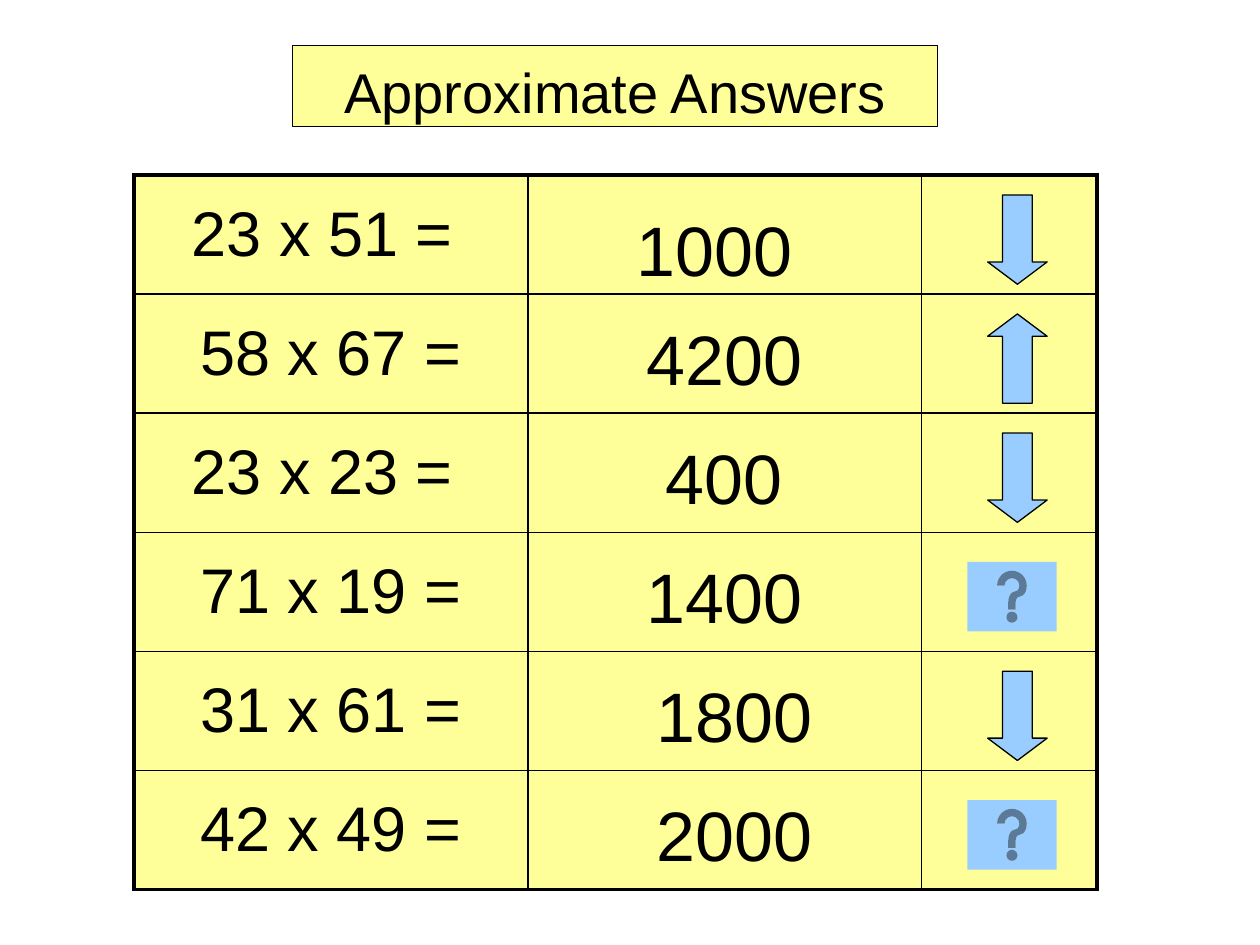
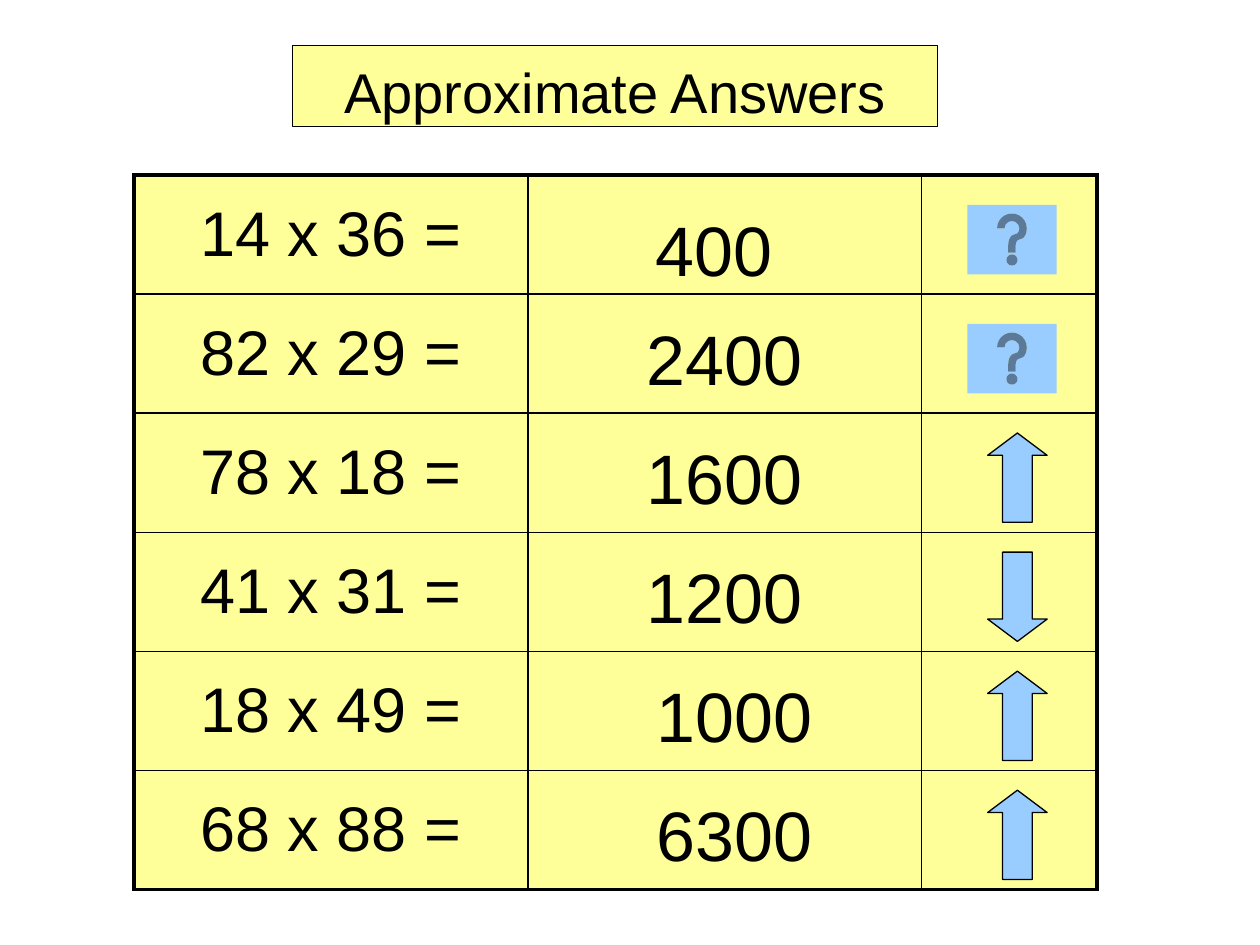
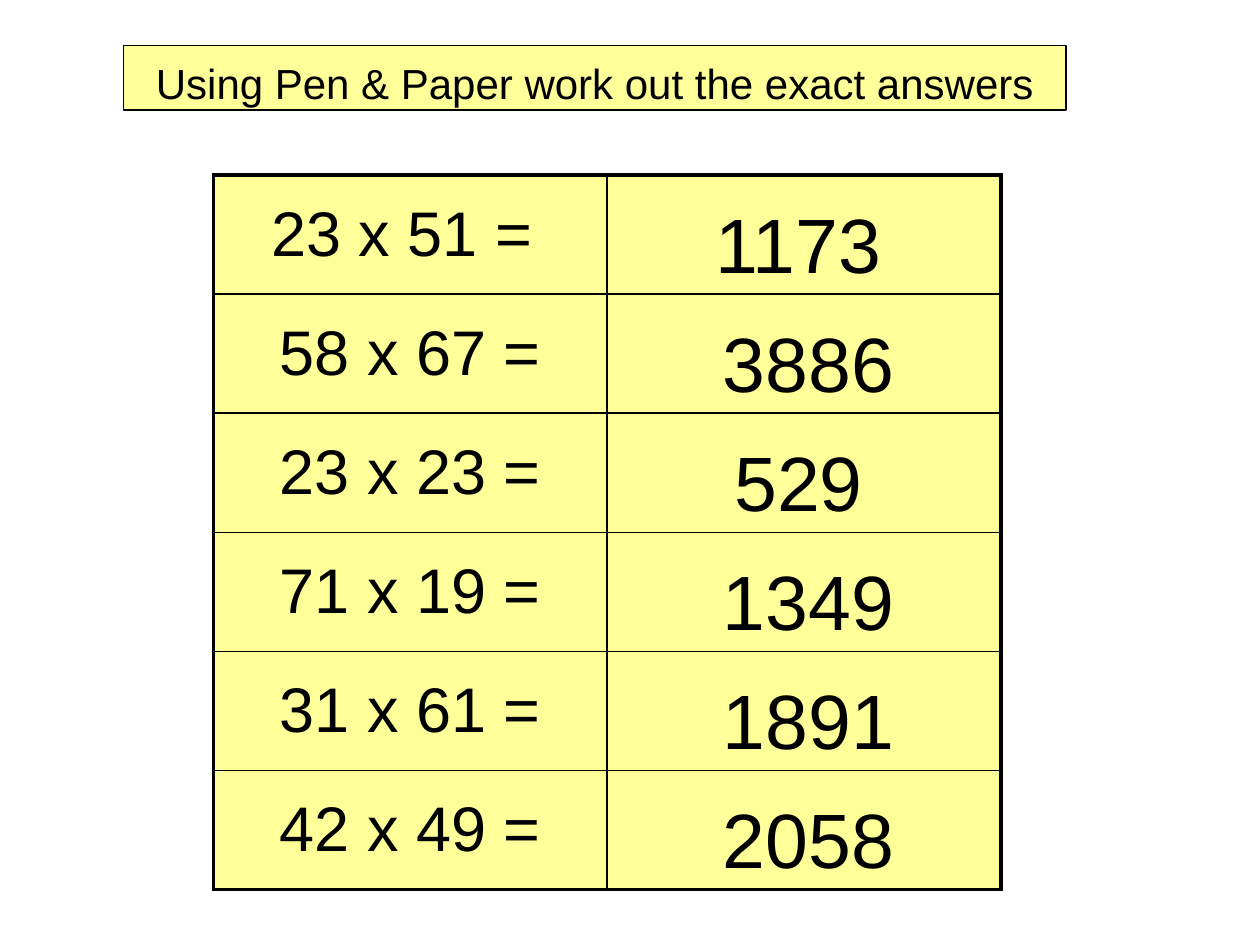
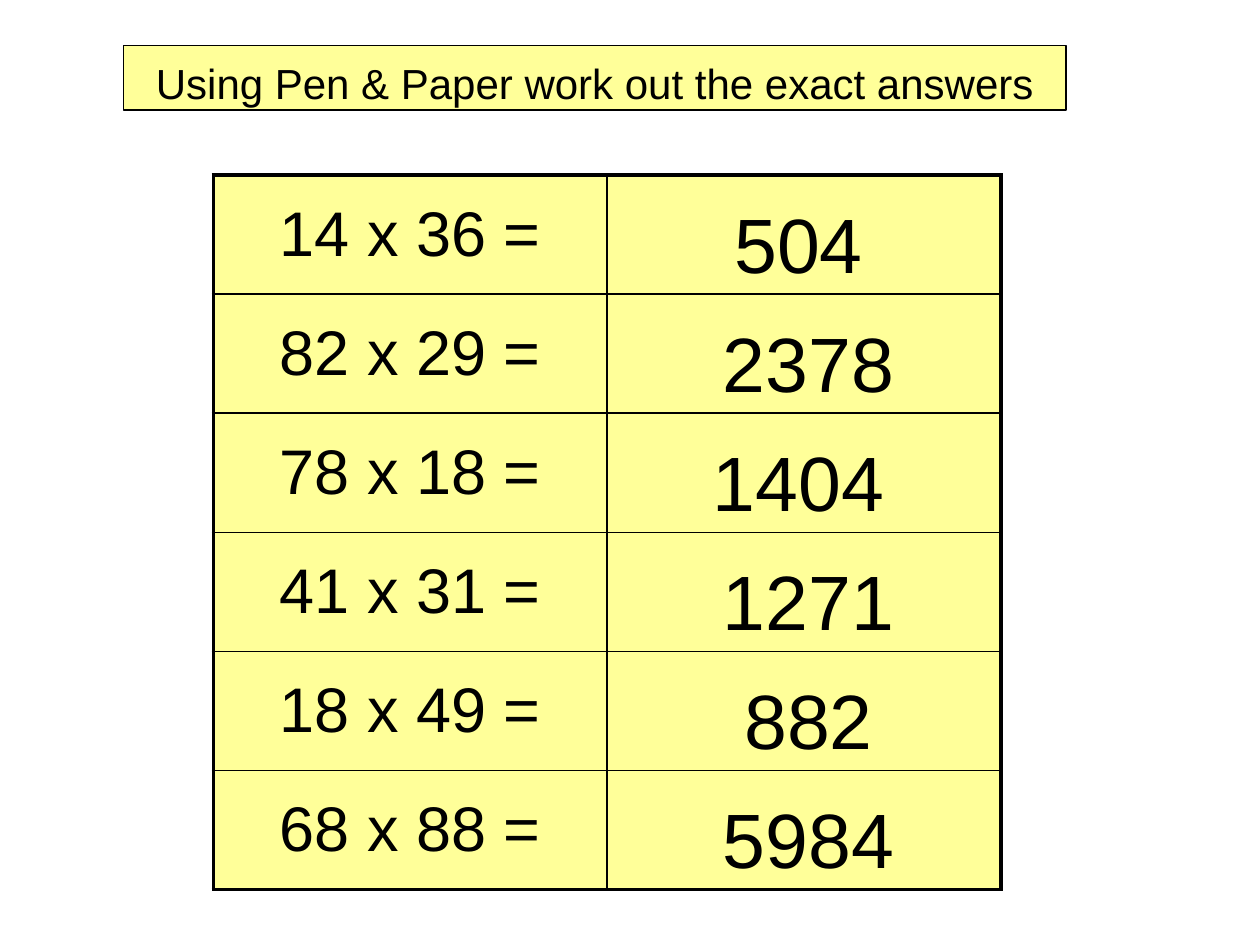
from typing import NamedTuple

from lxml.etree import SubElement
from pptx import Presentation
from pptx.dml.color import RGBColor as Rgb
from pptx.enum.shapes import MSO_SHAPE as Kind
from pptx.enum.text import MSO_ANCHOR as Anchor, MSO_AUTO_SIZE as Fit, PP_ALIGN as Align
from pptx.oxml.ns import qn
from pptx.shapes.base import BaseShape
from pptx.slide import Slide
from pptx.text.text import TextFrame
from pptx.util import Inches, Length, Mm, Pt

COLOR = {"ink": "000000", "pale": "FFFF99", "mark": "99CCFF"}
FONT = "Arial"

# Grid: one unit is 2 mm; the tables share rows and columns
ROW, COL, MARK_COL = 12, 39.7, 17.65
TABLE_TOP, TITLE_TOP = 17.65, 4.6
THIN, THICK = 1, 2.25


class Title(NamedTuple):
    words: list[tuple[str, int]]  # text and size
    left: float
    width: float
    height: float


class Style(NamedTuple):
    title: Title
    left: float
    cols: list[float]
    size: int
    width: float
    height: float
    shifts: list[int]  # sideways step of each answer
    drops: list[int]   # downward step of each answer


class Sum(NamedTuple):
    text: str
    answer: str
    mark: str = ""


ROUGH = Style(Title([("Approximate", 32), (" ", 24), ("Answers", 32)], 29.5, 65, 8.15),
              13.5, [COL, COL, MARK_COL], 40, 29, 9.75,
              [0, 1, 1, 1, 2, 2], [2, 1, 1, 1, 1, 1])
EXACT = Style(Title([("Using Pen & Paper work out the exact answers", 24)], 12.45, 95, 6.5),
              21.5, [COL, COL], 44, 30, 10.55,
              [0, 1, 0, 1, 1, 1], [1] * 6)

PAGES = [
    (ROUGH, [Sum("23 x 51 = ", "1000", "down"), Sum("58 x 67 =", "4200", "up"),
             Sum("23 x 23 = ", "400", "down"), Sum("71 x 19 =", "1400", "help"),
             Sum("31 x 61 =", "1800", "down"), Sum("42 x 49 =", "2000", "help")]),
    (ROUGH, [Sum("14 x 36 =", "400", "help"), Sum("82 x 29 =", "2400", "help"),
             Sum("78 x 18 =", "1600", "up"), Sum("41 x 31 =", "1200", "down"),
             Sum("18 x 49 =", "1000", "up"), Sum("68 x 88 =", "6300", "up")]),
    (EXACT, [Sum("23 x 51 = ", "1173"), Sum("58 x 67 =", "3886"),
             Sum("23 x 23 =", "529"), Sum("71 x 19 =", "1349"),
             Sum("31 x 61 =", "1891"), Sum("42 x 49 =", "2058")]),
    (EXACT, [Sum("14 x 36 =", "504"), Sum("82 x 29 =", "2378"),
             Sum("78 x 18 =", "1404"), Sum("41 x 31 =", "1271"),
             Sum("18 x 49 =", "882"), Sum("68 x 88 =", "5984")]),
]


def grid(*units: float) -> list[Length]:
    return [Mm(2 * unit) for unit in units]


def tint(name: str) -> Rgb:
    return Rgb.from_string(COLOR[name])


def write(frame: TextFrame, words: list[tuple[str, int]]) -> None:
    para = frame.paragraphs[0]
    para.alignment = Align.CENTER
    for text, size in words:
        run = para.add_run()
        run.text = text
        run.font.name, run.font.size = FONT, Pt(size)
        run.font.color.rgb = tint("ink")


def fit(frame: TextFrame) -> None:
    frame.word_wrap = True
    frame.auto_size = Fit.SHAPE_TO_FIT_TEXT
    frame.vertical_anchor = Anchor.TOP
    frame.margin_top, frame.margin_bottom = grid(1.15, 0.4)


def add_form(slide: Slide, kind: Kind, box: list[Length], fill: str,
             line: bool = True) -> BaseShape:
    form = slide.shapes.add_shape(kind, *box)
    form.shadow.inherit = False
    form.fill.solid()
    form.fill.fore_color.rgb = tint(fill)
    if line:
        form.line.color.rgb = tint("ink")
        form.line.width = Pt(0.75)
    else:
        form.line.fill.background()
    return form


def add_title(slide: Slide, title: Title) -> None:
    box = grid(title.left, TITLE_TOP, title.width, title.height)
    form = add_form(slide, Kind.RECTANGLE, box, "pale")
    fit(form.text_frame)
    write(form.text_frame, title.words)


def add_edge(cell, side: str, width: float) -> None:
    edge = SubElement(cell._tc.get_or_add_tcPr(), qn(f"a:ln{side}"), w=str(Pt(width)))
    fill = SubElement(edge, qn("a:solidFill"))
    SubElement(fill, qn("a:srgbClr"), val=COLOR["ink"])


def add_sums(slide: Slide, style: Style, sums: list[Sum]) -> None:
    rows, cols = len(sums), len(style.cols)
    box = grid(style.left, TABLE_TOP, sum(style.cols), ROW * rows)
    table = slide.shapes.add_table(rows, cols, *box).table
    table.first_row = table.horz_banding = False
    for col, width in zip(table.columns, style.cols):
        col.width = grid(width)[0]
    for r, item in enumerate(sums):
        table.rows[r].height = grid(ROW)[0]
        for c in range(cols):
            cell = table.cell(r, c)
            # The outer frame is thick, inner lines are thin
            outer = {"L": c == 0, "R": c == cols - 1, "T": r == 0, "B": r == rows - 1}
            for side, edge in outer.items():
                add_edge(cell, side, THICK if edge else THIN)
            cell.fill.solid()
            cell.fill.fore_color.rgb = tint("pale")
            cell.vertical_anchor = Anchor.MIDDLE
        write(table.cell(r, 0).text_frame, [(item.text, 36)])


def add_answer(slide: Slide, style: Style, row: int, text: str) -> None:
    left = style.left + COL + 4.3 + style.shifts[row]
    top = TABLE_TOP + ROW * row + style.drops[row]
    box = slide.shapes.add_textbox(*grid(left, top, style.width, style.height))
    fit(box.text_frame)
    write(box.text_frame, [(text, style.size)])


def add_mark(slide: Slide, style: Style, row: int, mark: str) -> None:
    left, top = style.left + 2 * COL, TABLE_TOP + ROW * row
    if mark == "help":
        box = grid(left + 4.6, top + 3, 9, 7)
        add_form(slide, Kind.ACTION_BUTTON_HELP, box, "mark", line=False)
    else:
        arrow = add_form(slide, Kind.UP_ARROW, grid(left + 6.65, top + 2, 6, 9), "mark")
        arrow.adjustments[0], arrow.adjustments[1] = 0.5, 0.375
        arrow.rotation = 180 if mark == "down" else 0


def main() -> None:
    deck = Presentation()
    deck.slide_width, deck.slide_height = Inches(10), Inches(7.5)
    for style, sums in PAGES:
        slide = deck.slides.add_slide(deck.slide_layouts[6])
        add_title(slide, style.title)
        add_sums(slide, style, sums)
        for row, item in enumerate(sums):
            add_answer(slide, style, row, item.answer)
            if item.mark:
                add_mark(slide, style, row, item.mark)
    deck.save("out.pptx")


if __name__ == "__main__":
    main()
